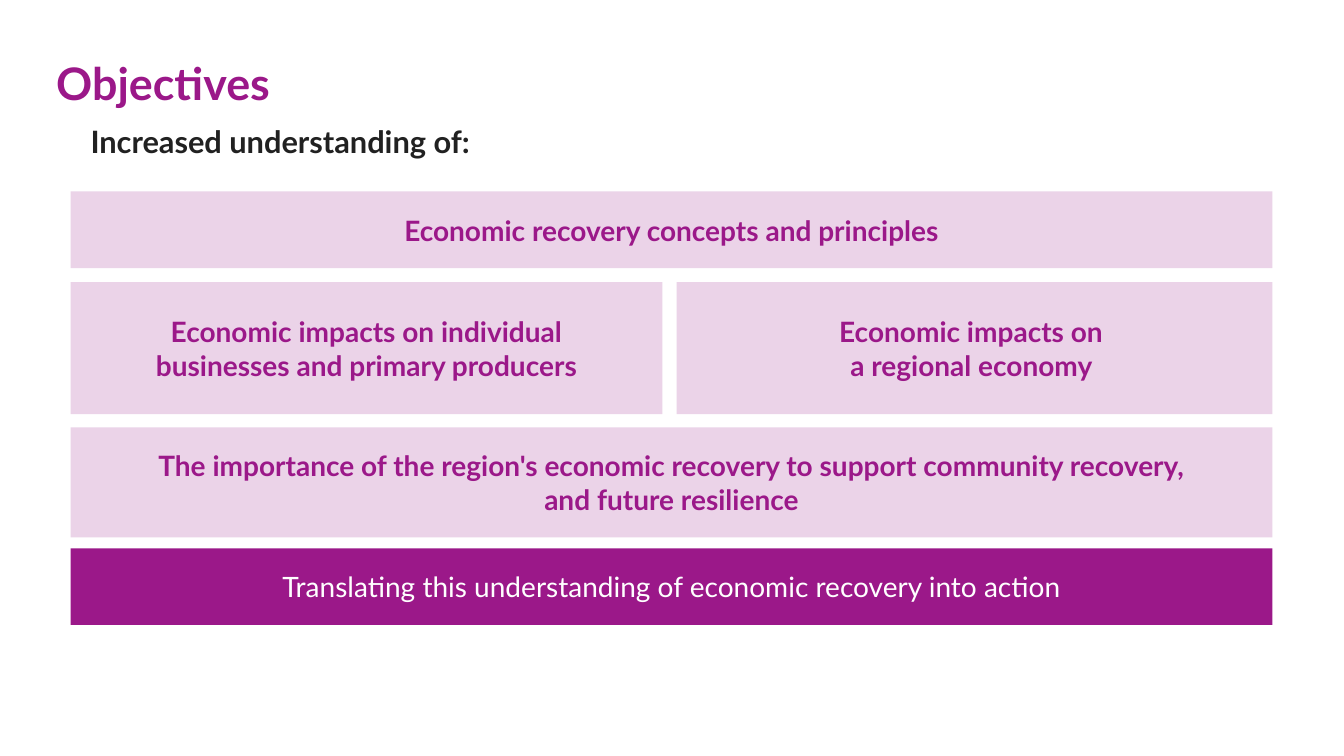
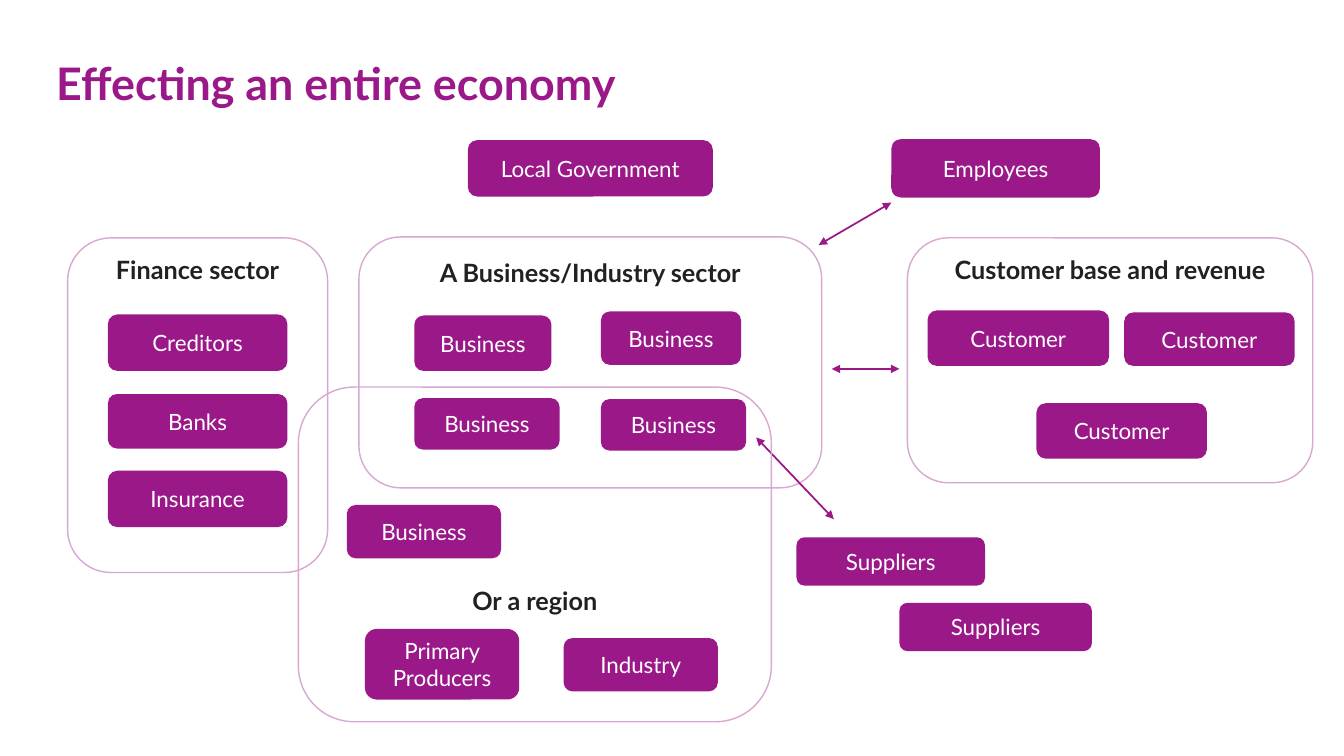
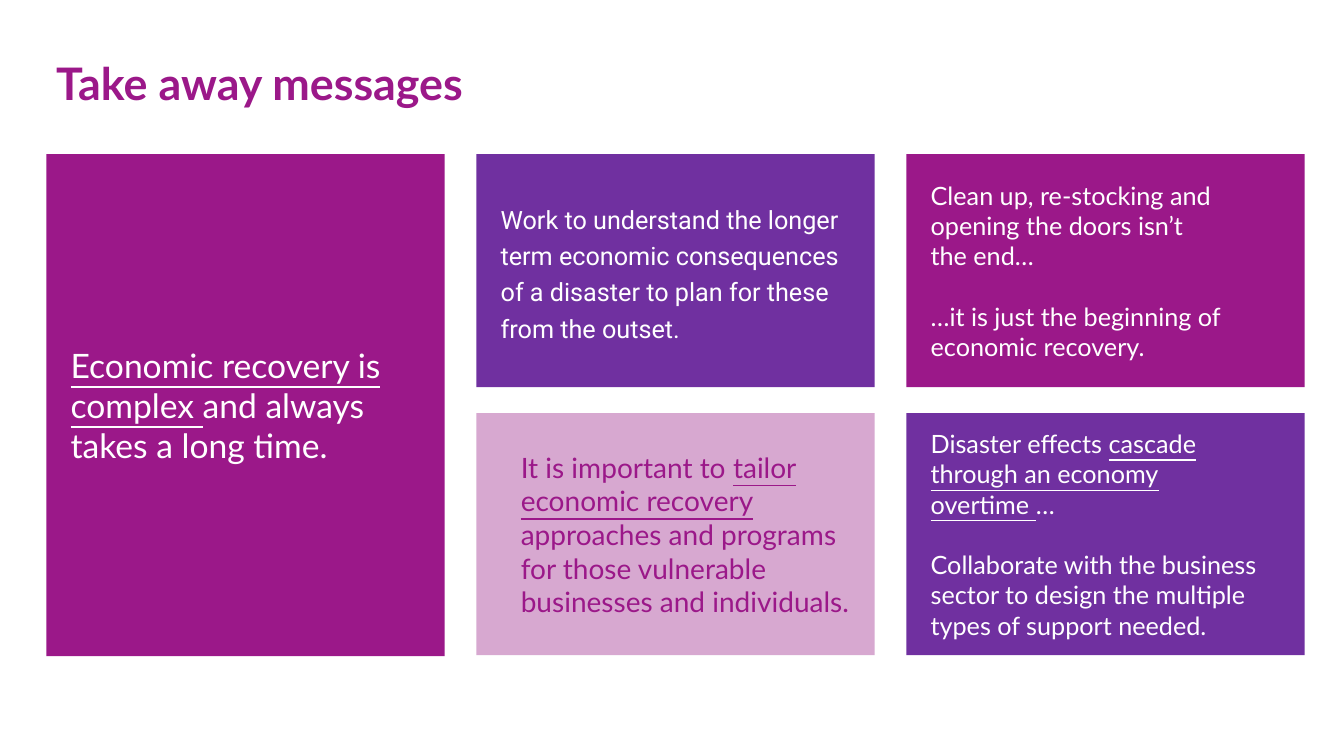
"""Build three slides on economic recovery: objectives, the economy and take away messages."""
from lxml import etree
from pptx import Presentation
from pptx.dml.color import RGBColor
from pptx.enum import shapes, text
from pptx.oxml.ns import qn
from pptx.util import Inches, Pt

MAGENTA = RGBColor(0x9B, 0x18, 0x89)
PURPLE = RGBColor(0x70, 0x30, 0xA0)
PINK = RGBColor(0xD7, 0xA8, 0xD0)
PALE = RGBColor(0xEB, 0xD3, 0xE8)
INK = RGBColor(0x21, 0x21, 0x21)
WHITE = RGBColor(0xFF, 0xFF, 0xFF)
FONT = "Lato"
RECT = shapes.MSO_SHAPE.RECTANGLE
ROUND = shapes.MSO_SHAPE.ROUNDED_RECTANGLE
LEFT, CENTER = text.PP_ALIGN.LEFT, text.PP_ALIGN.CENTER
TOP, MIDDLE = text.MSO_ANCHOR.TOP, text.MSO_ANCHOR.MIDDLE

TITLE_BOX = (0.46, 0.22, 12.47, 1.14)

OBJECTIVES_LEAD = "Increased understanding of:"
OBJECTIVES_LEFT, OBJECTIVES_GAP = 0.7, 0.14
OBJECTIVE_ROWS = [
    (1.9, 0.76, [(11.92, ["Economic recovery concepts and principles"])]),
    (2.8, 1.31, [
        (5.87, ["Economic impacts on individual", "businesses and primary producers"]),
        (5.91, ["Economic impacts on ", "a regional economy "]),
    ]),
    (4.24, 1.09, [(11.92, [
        "The importance of the region's economic recovery to support community recovery,",
        "and future resilience",
    ])]),
]
ACTION_BOX = (0.7, 5.44, 11.92, 0.76)
ACTION = "Translating this understanding of economic recovery into action"

SECTORS = [
    ("Customer base and revenue", (9, 2.36, 4.02, 2.43), 0.05),
    ("A Business/Industry sector", (3.56, 2.35, 4.59, 2.49), 0.08),
    ("Finance sector", (0.67, 2.36, 2.58, 3.32), 0.04),
]
REGION = ("Or a region", (2.96, 3.84, 4.69, 3.32), 1.8)
ACTORS = {
    "Local Government": [(4.64, 1.39, 2.43, 0.56)],
    "Employees": [(8.84, 1.38, 2.07, 0.58)],
    "Creditors": [(1.07, 3.12, 1.78, 0.56)],
    "Banks": [(1.07, 3.91, 1.78, 0.54)],
    "Insurance": [(1.07, 4.67, 1.78, 0.56)],
    "Business": [
        (4.11, 3.13, 1.36, 0.55),
        (5.96, 3.09, 1.39, 0.53),
        (4.11, 3.95, 1.44, 0.51),
        (5.96, 3.96, 1.44, 0.51),
        (3.44, 5.01, 1.53, 0.53),
    ],
    "Customer": [
        (9.2, 3.08, 1.8, 0.55),
        (11.15, 3.1, 1.69, 0.53),
        (10.28, 4, 1.69, 0.55),
    ],
    "Suppliers": [(7.9, 5.33, 1.87, 0.48), (8.92, 5.98, 1.91, 0.48)],
    "Primary Producers": [(3.62, 6.24, 1.53, 0.7)],
    "Industry": [(5.59, 6.33, 1.53, 0.53)],
}
FLOWS = [
    (7.5, 4.34, 8.27, 5.15),
    (8.12, 2.43, 8.84, 2.01),
    (8.25, 3.66, 8.92, 3.66),
]

CARDS_LEFT, CARDS_WIDTH, CARD_WIDTH = 0.46, 12.48, 3.95
CARD_ROWS = {"full": (1.53, 4.98), "upper": (1.53, 2.31), "lower": (4.1, 2.4)}
CARD_PAD = (0.24, 0.12, 0.24, 0.12)
INDENTED_PAD = (0.44, 0.12, 0.24, 0.12)
PARAGRAPH_GAP = 21.6
CARDS = [
    (0, "full", MAGENTA, dict(size=24), [
        [("Economic recovery is complex ", True), ("and always takes a long time.", False)],
    ]),
    (1, "upper", PURPLE, dict(size=18, font="Roboto", spacing=1.2), [
        "Work to understand the longer term economic consequences of a disaster "
        "to plan for these from the outset.",
    ]),
    (2, "upper", MAGENTA, dict(size=18, gap_before=2), [
        "Clean up, re-stocking and opening the doors isn’t",
        "the end…",
        "…it is just the beginning of economic recovery.",
    ]),
    (1, "lower", PINK, dict(size=20, color=MAGENTA, pad=INDENTED_PAD), [
        [
            ("It is important to ", False),
            ("tailor economic recovery ", True),
            ("approaches and programs for those vulnerable businesses and individuals.", False),
        ],
    ]),
    (2, "lower", PURPLE, dict(size=18, gap_before=2), [
        [("Disaster effects ", False), ("cascade through an economy", True)],
        [("overtime ", True), ("…", False)],
        "Collaborate with the business sector to design the multiple types of support needed.",
    ]),
]


def write(sp, paragraphs, size, color=WHITE, bold=False, font=FONT, align=CENTER,
          anchor=MIDDLE, pad=(0.1, 0.05, 0.1, 0.05), spacing=None, gap_before=None):
    """Fill a shape with paragraphs, each a string or a list of (text, underlined)."""
    tf = sp.text_frame
    tf.word_wrap = True
    tf.vertical_anchor = anchor
    tf.margin_left, tf.margin_top, tf.margin_right, tf.margin_bottom = map(Inches, pad)
    for i, runs in enumerate(paragraphs):
        p = tf.add_paragraph() if i else tf.paragraphs[0]
        p.alignment = align
        if spacing:
            p.line_spacing = spacing
        if i and i == gap_before:
            p.space_before = Pt(PARAGRAPH_GAP)
        for words, underlined in [(runs, False)] if isinstance(runs, str) else runs:
            r = p.add_run()
            r.text = words
            r.font.name = font
            r.font.size = Pt(size)
            r.font.bold = bold
            r.font.color.rgb = color
            if underlined:
                r.font.underline = True


def add_text(s, box, paragraphs, **style):
    """Add a text box."""
    write(s.shapes.add_textbox(*map(Inches, box)), paragraphs, align=LEFT, **style)


def add_box(s, kind, box, fill, paragraphs, line=None, **style):
    """Add a preset shape with text; a fill or line of None is left out."""
    sp = s.shapes.add_shape(kind, *map(Inches, box))
    sp.shadow.inherit = False
    if fill is None:
        sp.fill.background()
    else:
        sp.fill.solid()
        sp.fill.fore_color.rgb = fill
    if line is None:
        sp.line.fill.background()
    else:
        sp.line.color.rgb = line
        sp.line.width = Pt(1)
    write(sp, paragraphs, **style)


def add_sector(s, label, box, label_top):
    """Add an outlined sector with its label."""
    add_box(s, ROUND, box, None, [label], line=PINK, size=18, color=INK, bold=True,
            anchor=TOP, pad=(0.1, label_top, 0.1, 0.05))


def add_flow(s, ends):
    """Add a line with an arrowhead at both ends."""
    c = s.shapes.add_connector(shapes.MSO_CONNECTOR.STRAIGHT, *map(Inches, ends))
    c.line.color.rgb = MAGENTA
    c.line.width = Pt(1.25)
    ln = c.line._get_or_add_ln()
    for end in ("a:headEnd", "a:tailEnd"):
        etree.SubElement(ln, qn(end), type="triangle")
    etree.SubElement(c._element.spPr, qn("a:effectLst"))


def add_slide(prs, title):
    """Add a blank slide with the shared title."""
    s = prs.slides.add_slide(prs.slide_layouts[6])
    add_text(s, TITLE_BOX, [title], size=32, color=MAGENTA, bold=True,
             anchor=MIDDLE, spacing=1.1)
    return s


def build_objectives(prs):
    """Build the stacked objectives."""
    s = add_slide(prs, "Objectives")
    for top, height, cells in OBJECTIVE_ROWS:
        left = OBJECTIVES_LEFT
        for width, lines in cells:
            add_box(s, RECT, (left, top, width, height), PALE, lines,
                    size=20, color=MAGENTA, bold=True)
            left += width + OBJECTIVES_GAP
    add_box(s, RECT, ACTION_BOX, MAGENTA, [ACTION], size=20)
    add_text(s, (0.8, 1.17, 11.3, 0.47), [OBJECTIVES_LEAD], size=22, color=INK,
             bold=True, anchor=TOP)


def build_economy(prs):
    """Build the map of sectors, actors and flows."""
    s = add_slide(prs, "Effecting an entire economy")
    for sector in SECTORS:
        add_sector(s, *sector)
    for name, boxes in ACTORS.items():
        for box in boxes:
            add_box(s, ROUND, box, MAGENTA, [name], size=16)
    for ends in FLOWS:
        add_flow(s, ends)
    add_sector(s, *REGION)


def build_messages(prs):
    """Build the grid of message cards."""
    s = add_slide(prs, "Take away messages")
    step = (CARDS_WIDTH - CARD_WIDTH) / 2
    for column, row, fill, style, paragraphs in CARDS:
        top, height = CARD_ROWS[row]
        box = (CARDS_LEFT + column * step, top, CARD_WIDTH, height)
        add_box(s, RECT, box, fill, paragraphs, **{"align": LEFT, "pad": CARD_PAD, **style})


def main():
    """Build and save the presentation."""
    prs = Presentation()
    prs.slide_width, prs.slide_height = Inches(13.33), Inches(7.5)
    build_objectives(prs)
    build_economy(prs)
    build_messages(prs)
    prs.save("out.pptx")


if __name__ == "__main__":
    main()
